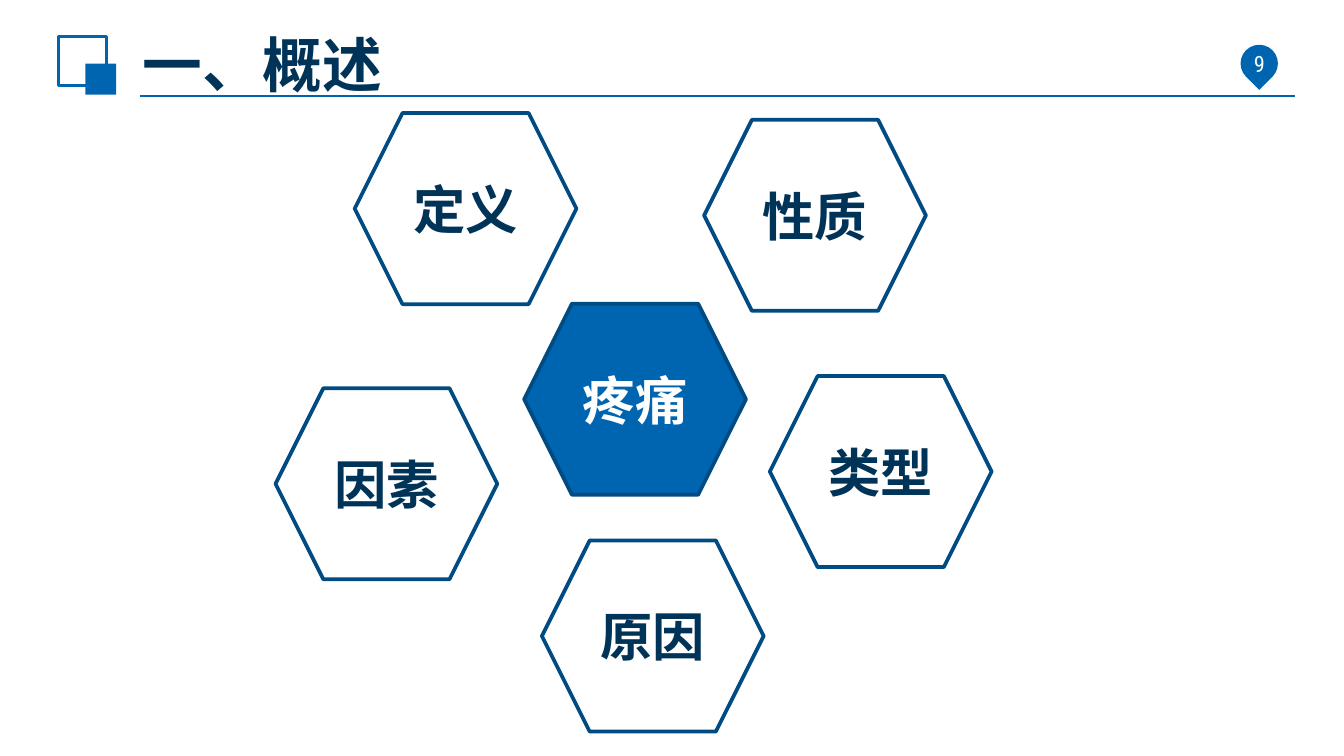
from lxml import etree
from pptx import Presentation
from pptx.dml.color import RGBColor
from pptx.enum.shapes import MSO_CONNECTOR, MSO_SHAPE
from pptx.enum.text import MSO_ANCHOR, MSO_AUTO_SIZE, PP_ALIGN
from pptx.oxml.ns import qn
from pptx.util import Pt

STRAIGHT = MSO_CONNECTOR.STRAIGHT
RECTANGLE, HEXAGON, TEARDROP = MSO_SHAPE.RECTANGLE, MSO_SHAPE.HEXAGON, MSO_SHAPE.TEAR
MIDDLE, NO_FIT = MSO_ANCHOR.MIDDLE, MSO_AUTO_SIZE.NONE
LEFT, CENTER = PP_ALIGN.LEFT, PP_ALIGN.CENTER

COLORS = {"blue": "0065B0", "outline": "004B82", "navy": "003358", "white": "FFFFFF"}
TITLE_ONLY = 5
HEXAGON_SIZE = (118.8, 102.4)
# Left and top of each aspect around the central topic
ASPECTS = {
    "性质": (377.2, 64.2),
    "定义": (190, 60.6),
    "因素": (147.6, 208),
    "原因": (290.3, 289.6),
    "类型": (412.4, 201.5),
}


def rgb(name):
    return RGBColor.from_string(COLORS[name])


class SlideBuilder:
    def __init__(self, slide, font="Arial"):
        self.slide = slide
        self.font = font

    def set_text(self, frame, text, size, color, align=CENTER, bold=True, font=None):
        frame.word_wrap = True
        frame.auto_size = NO_FIT
        frame.vertical_anchor = MIDDLE
        frame.text = text
        paragraph = frame.paragraphs[0]
        paragraph.alignment = align
        paragraph.font.name = font or self.font
        paragraph.font.size = Pt(size)
        paragraph.font.bold = bold
        paragraph.font.color.rgb = rgb(color)

    def title(self, text, left, top, width, height):
        title = self.slide.shapes.title
        title.left, title.top = Pt(left), Pt(top)
        title.width, title.height = Pt(width), Pt(height)
        frame = title.text_frame
        frame.margin_left = frame.margin_right = Pt(5.3)
        frame.margin_top = frame.margin_bottom = Pt(2.7)
        self.set_text(frame, text, 32, "navy", LEFT)

    def label(self, text, left, top, width, height, **style):
        box = self.slide.shapes.add_textbox(Pt(left), Pt(top), Pt(width), Pt(height))
        self.set_text(box.text_frame, text, **style)

    def shape(self, kind, left, top, width, height, fill=None, line=None, weight=2):
        shape = self.slide.shapes.add_shape(kind, Pt(left), Pt(top), Pt(width), Pt(height))
        shape.shadow.inherit = False
        if fill:
            shape.fill.solid()
            shape.fill.fore_color.rgb = rgb(fill)
        else:
            shape.fill.background()
        if line:
            shape.line.color.rgb = rgb(line)
            shape.line.width = Pt(weight)
        else:
            shape.line.fill.background()
        return shape

    def hexagon(self, text, left, top, fill=None, color="navy"):
        hexagon = self.shape(HEXAGON, left, top, *HEXAGON_SIZE, fill=fill, line="outline")
        self.set_text(hexagon.text_frame, text, 28, color)

    def rule(self, left, right, y):
        rule = self.slide.shapes.add_connector(STRAIGHT, Pt(left), Pt(y), Pt(right), Pt(y))
        rule.line.color.rgb = rgb("blue")
        rule.line.width = Pt(1.25)
        etree.SubElement(rule._element.spPr, qn("a:effectLst"))


def main():
    deck = Presentation()
    deck.slide_width, deck.slide_height = Pt(720), Pt(405)
    builder = SlideBuilder(deck.slides.add_slide(deck.slide_layouts[TITLE_ONLY]))

    builder.rule(75, 694, 51.6)
    builder.shape(RECTANGLE, 31.2, 19.5, 25.8, 26.5, line="blue", weight=1.5)
    builder.shape(RECTANGLE, 45.8, 34.1, 16.5, 16.6, fill="blue")
    builder.title("一、概述", 71.3, 20.9, 464.4, 26)

    page_marker = builder.shape(TEARDROP, 664.6, 24, 20, 20, fill="blue")
    page_marker.rotation = 135
    builder.label("9", 626.4, 22, 96.5, 24, size=12, color="white",
                  bold=False, font="Roboto Condensed")

    builder.hexagon("疼痛", 280.8, 162.7, fill="blue", color="white")
    for aspect, (left, top) in ASPECTS.items():
        builder.hexagon(aspect, left, top)

    deck.save("out.pptx")


if __name__ == "__main__":
    main()
